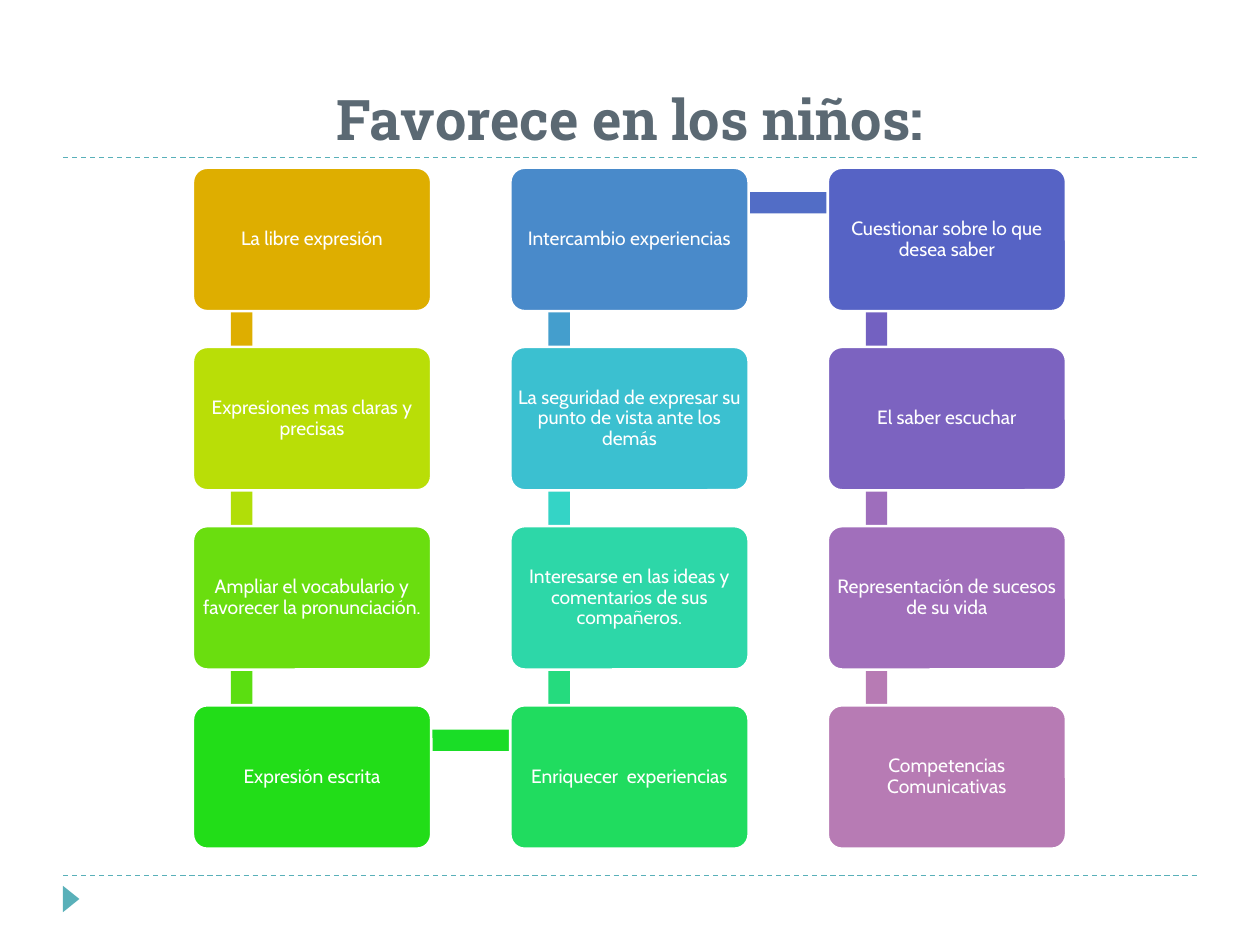
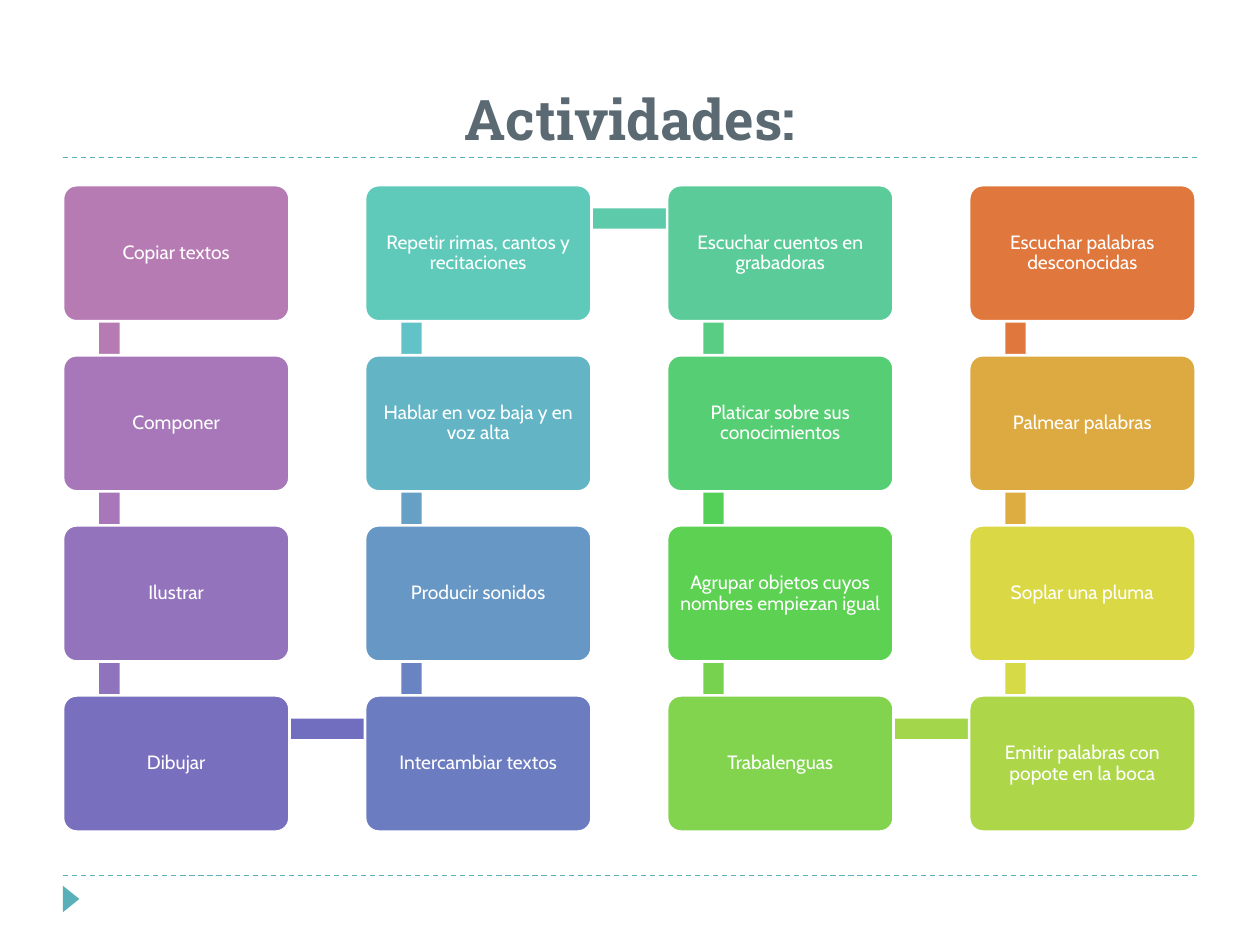
import dataclasses

import pptx
import pptx.dml.color
import pptx.enum.dml
import pptx.enum.shapes
import pptx.enum.text
import pptx.oxml.ns
import pptx.util
from lxml import etree

Pt = pptx.util.Pt
Shapes = pptx.enum.shapes.MSO_SHAPE
Anchor = pptx.enum.text.MSO_ANCHOR


@dataclasses.dataclass(frozen=True)
class Theme:
    accent: str = "59B0B9"
    title_color: str = "5B6973"
    white: str = "FFFFFF"
    title_font: str = "Roboto Slab"
    body_font: str = "Cabin"
    title_size: int = 32
    body_size: int = 11


theme = Theme()
rgb = pptx.dml.color.RGBColor.from_string

benefits = [
    ("La libre expresión", "DEAE00", "DEAE00"),
    ("Expresiones mas claras y precisas", "B9DE07", "B1DE08"),
    ("Ampliar el vocabulario y favorecer la pronunciación.", "6ADE0F", "5BDE11"),
    ("Expresión escrita", "22DD18", "1ADD27"),
    ("Enriquecer  experiencias", "20DC5F", "25DB7E"),
    ("Interesarse en las ideas y comentarios de sus compañeros.", "2DD7A8", "34D4C6"),
    ("La seguridad de expresar su punto de vista ante los demás", "3BC0D0", "449ECD"),
    ("Intercambio experiencias", "498ACA", "526DC6"),
    ("Cuestionar sobre lo que desea saber", "5663C5", "7361C1"),
    ("El saber escuchar", "7C63C0", "9E6EBC"),
    ("Representación de sucesos de su vida", "A16FBB", "B77BB4"),
    ("Competencias Comunicativas", "B77BB4", None),
]
activities = [
    ("Copiar textos", "B77BB4", "B77BB4"),
    ("Componer", "A877B9", "A777BA"),
    ("Ilustrar", "9273BC", "8F73BC"),
    ("Dibujar", "786FBE", "726EBF"),
    ("Intercambiar textos", "6B7CC1", "6A83C2"),
    ("Producir sonidos", "6797C4", "66A1C5"),
    ("Hablar en voz baja y en voz alta", "63B5C6", "61C3C7"),
    ("Repetir rimas, cantos y recitaciones", "5FC9BA", "5DCAAA"),
    ("Escuchar cuentos en grabadoras", "5BCC99", "58CD83"),
    ("Platicar sobre sus conocimientos", "56CE73", "54D058"),
    ("Agrupar objetos cuyos nombres empiezan igual", "5CD152", "77D34F"),
    ("Trabalenguas", "82D44E", "A3D64A"),
    ("Emitir palabras con popote en la boca", "ADD749", "D5DA46"),
    ("Soplar una pluma", "DAD845", "DDAD41"),
    ("Palmear palabras", "DDAA41", "E0773C"),
    ("Escuchar palabras desconocidas", "E0773C", None),
]
topics = [
    ("Favorece en los niños:", benefits, (110.2, 95.8), (136.2, 82), (181.4, 102.4)),
    ("Actividades:", activities, (36, 105.8), (129.4, 77.8), (172.6, 97.2)),
]
rows = 4


def add_filled(slide, preset, left, top, width, height, color):
    shape = slide.shapes.add_shape(preset, Pt(left), Pt(top), Pt(width), Pt(height))
    shape.shadow.inherit = False
    shape.fill.solid()
    shape.fill.fore_color.rgb = rgb(color)
    shape.line.fill.background()
    return shape


def write_centered(frame, text, anchor, font_name, size, color, bold=False):
    frame.text = text
    frame.word_wrap = True
    frame.vertical_anchor = anchor
    paragraph = frame.paragraphs[0]
    paragraph.alignment = pptx.enum.text.PP_ALIGN.CENTER
    font = paragraph.runs[0].font
    font.name, font.size, font.bold = font_name, Pt(size), bold
    font.color.rgb = rgb(color)
    return paragraph


deck = pptx.Presentation()
deck.slide_width, deck.slide_height = Pt(720), Pt(540)

for heading, steps, (left, top), (width, height), (pitch_x, pitch_y) in topics:
    slide = deck.slides.add_slide(deck.slide_layouts[6])

    for rule_y in (500.4, 90):
        rule = slide.shapes.add_connector(
            pptx.enum.shapes.MSO_CONNECTOR.STRAIGHT, Pt(36), Pt(rule_y), Pt(684), Pt(rule_y))
        rule.line.color.rgb = rgb(theme.accent)
        rule.line.width = Pt(0.75)
        rule.line.dash_style = pptx.enum.dml.MSO_LINE.DASH
        etree.SubElement(rule._element.spPr, pptx.oxml.ns.qn("a:effectLst"))

    footer_marker = add_filled(slide, Shapes.ISOSCELES_TRIANGLE, 33.1, 509, 15.1, 9.4, theme.accent)
    footer_marker.rotation = 90

    title = slide.shapes.add_textbox(Pt(36), Pt(12.2), Pt(648), Pt(77.8))
    write_centered(title.text_frame, heading, Anchor.BOTTOM, theme.title_font,
                   theme.title_size, theme.title_color, bold=True)

    thickness = 0.09 * width
    for index, (label, step_color, link_color) in enumerate(steps):
        column, position = divmod(index, rows)
        goes_down = column % 2 == 0
        row = position if goes_down else rows - 1 - position
        x, y = left + column * pitch_x, top + row * pitch_y

        if link_color:
            joint_x, joint_y = x + 0.205 * width, y + 0.245 * height
            if position == rows - 1:
                add_filled(slide, Shapes.RECTANGLE, joint_x, joint_y - thickness / 2,
                           pitch_x, thickness, link_color)
            else:
                link_top = joint_y if goes_down else joint_y - pitch_y
                add_filled(slide, Shapes.RECTANGLE, joint_x - thickness / 2, link_top,
                           thickness, pitch_y, link_color)

        step = add_filled(slide, Shapes.ROUNDED_RECTANGLE, x, y, width, height, step_color)
        step.adjustments[0] = 0.1
        step.line.color.rgb = rgb(theme.white)
        step.line.width = Pt(1.5)
        frame = step.text_frame
        frame.margin_left = frame.margin_right = frame.margin_top = frame.margin_bottom = Pt(1.2)
        paragraph = write_centered(frame, label, Anchor.MIDDLE, theme.body_font,
                                   theme.body_size, theme.white)
        paragraph.line_spacing = 0.9

deck.save("out.pptx")
